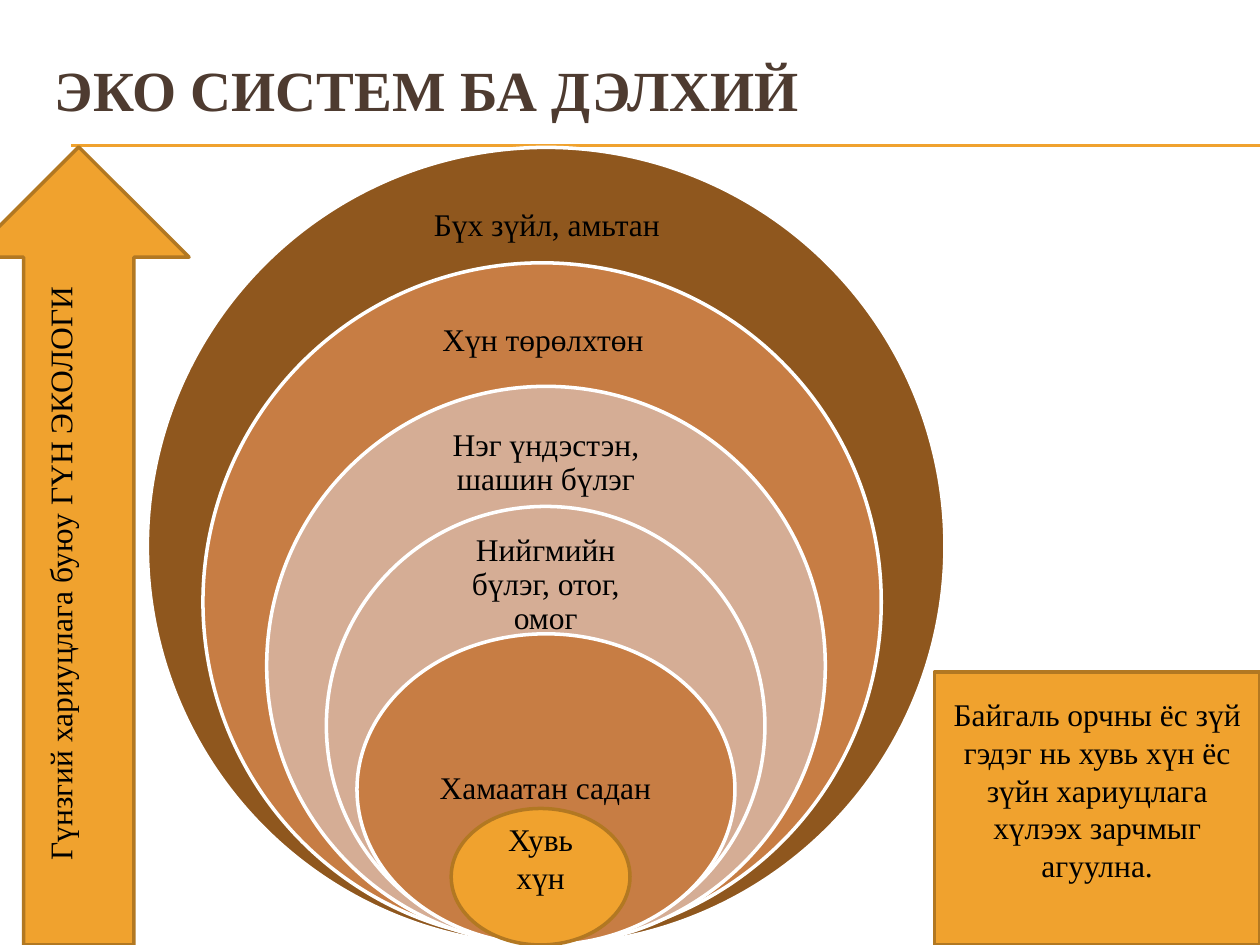
from dataclasses import dataclass

import lxml.etree
import pptx
import pptx.dml.color
import pptx.enum.shapes
import pptx.enum.text
import pptx.oxml.ns
import pptx.util

Pt = pptx.util.Pt
Shape = pptx.enum.shapes.MSO_SHAPE
Anchor = pptx.enum.text.MSO_ANCHOR
Align = pptx.enum.text.PP_ALIGN


@dataclass(frozen=True)
class Theme:
    font: str = "Times New Roman"
    title_size: float = 32.4
    body_size: float = 18
    title: str = "4E3B30"
    text: str = "000000"
    accent: str = "F0A22E"
    accent_edge: str = "B27822"
    ring_edge: str = "FFFFFF"
    brown: str = "8F571E"
    copper: str = "C77D44"
    sand: str = "D5AD95"
    rule_width: float = 0.75
    edge_width: float = 2


@dataclass(frozen=True)
class Box:
    left: float
    top: float
    width: float
    height: float

    def lengths(self) -> tuple:
        return tuple(Pt(v) for v in (self.left, self.top, self.width, self.height))


@dataclass(frozen=True)
class Ring:
    label: str
    fill: str
    outline: Box
    label_box: Box


@dataclass(frozen=True)
class Callout:
    text: str
    kind: int
    box: Box
    insets: dict
    vertical: bool = False


THEME = Theme()

RINGS = [
    Ring("Бүх зүйл, амьтан", THEME.brown,
         Box(84.24, 84.24, 455.76, 455.76), Box(226.8, 106.6, 171.4, 45.4)),
    Ring("Хүн төрөлхтөн", THEME.copper,
         Box(116, 150.2, 387.6, 387.6), Box(226.8, 172.8, 167, 44.6)),
    Ring("Нэг үндэстэн, шашин бүлэг", THEME.sand,
         Box(152.4, 220.8, 319.2, 319.2), Box(229.5, 242.6, 165, 44)),
    Ring("Нийгмийн бүлэг, отог, омог", THEME.sand,
         Box(186.5, 289.4, 250.6, 250.6), Box(244.1, 311.8, 135.4, 45.4)),
    Ring("Хамаатан садан", THEME.copper,
         Box(204, 362.2, 216, 177.8), Box(235.4, 406.8, 152.6, 88.6)),
]

CALLOUTS = [
    Callout("Хувь хүн", Shape.FLOWCHART_CONNECTOR, Box(257.8, 462, 102.2, 78),
            {"margin_bottom": Pt(25.2)}),
    Callout("Гүнзгий хариуцлага буюу ГҮН ЭКОЛОГИ", Shape.UP_ARROW,
            Box(-18, 84, 126, 456), {"margin_right": Pt(25.2)}, vertical=True),
    Callout("Байгаль орчны ёс зүй гэдэг нь хувь хүн ёс зүйн хариуцлага "
            "хүлээх зарчмыг агуулна.", Shape.RECTANGLE,
            Box(534, 384, 186, 156), {"margin_bottom": Pt(25.2)}),
]


def rgb(value: str) -> pptx.dml.color.RGBColor:
    return pptx.dml.color.RGBColor.from_string(value)


def apply(target, formats: dict) -> None:
    for name, value in formats.items():
        setattr(target, name, value)


def write(frame, text: str, frame_formats: dict, paragraph_formats: dict,
          size: float = THEME.body_size, color: str = THEME.text,
          bold: bool = False) -> None:
    frame.text = text
    apply(frame, {"word_wrap": True, "vertical_anchor": Anchor.MIDDLE,
                  "auto_size": pptx.enum.text.MSO_AUTO_SIZE.NONE, **frame_formats})
    paragraph = frame.paragraphs[0]
    apply(paragraph, {"alignment": Align.CENTER, **paragraph_formats})
    font = paragraph.runs[0].font
    apply(font, {"name": THEME.font, "size": Pt(size), "bold": bold})
    font.color.rgb = rgb(color)


def add_filled(shapes, kind: int, box: Box, fill: str, edge: str):
    shape = shapes.add_shape(kind, *box.lengths())
    shape.shadow.inherit = False
    shape.fill.solid()
    shape.fill.fore_color.rgb = rgb(fill)
    shape.line.color.rgb = rgb(edge)
    shape.line.width = Pt(THEME.edge_width)
    return shape


def add_rule(shapes, y: float) -> None:
    rule = shapes.add_connector(pptx.enum.shapes.MSO_CONNECTOR.STRAIGHT,
                                Pt(40.5), Pt(y), Pt(720), Pt(y))
    rule.line.color.rgb = rgb(THEME.accent)
    rule.line.width = Pt(THEME.rule_width)
    lxml.etree.SubElement(rule.element.spPr, pptx.oxml.ns.qn("a:effectLst"))


def add_ring(shapes, ring: Ring) -> None:
    add_filled(shapes, Shape.OVAL, ring.outline, ring.fill, THEME.ring_edge)
    label = shapes.add_textbox(*ring.label_box.lengths())
    sides = ("left", "top", "right", "bottom")
    write(label.text_frame, ring.label,
          {f"margin_{side}": Pt(10) for side in sides},
          {"line_spacing": 0.9, "space_after": Pt(6.3)})


def add_callout(shapes, callout: Callout) -> None:
    shape = add_filled(shapes, callout.kind, callout.box,
                       THEME.accent, THEME.accent_edge)
    write(shape.text_frame, callout.text, callout.insets, {})
    if callout.vertical:
        body = shape.element.txBody.find(pptx.oxml.ns.qn("a:bodyPr"))
        body.set("vert", "vert270")


def main() -> None:
    deck = pptx.Presentation()
    apply(deck, {"slide_width": Pt(720), "slide_height": Pt(540)})
    slide = deck.slides.add_slide(deck.slide_layouts[5])
    shapes = slide.shapes

    heading = shapes.title
    left, top, width, height = Box(24, 36, 684, 66).lengths()
    apply(heading, {"left": left, "top": top, "width": width, "height": height})
    write(heading.text_frame, "ЭКО СИСТЕМ БА ДЭЛХИЙ",
          {"margin_top": Pt(0), "margin_bottom": Pt(36)},
          {"alignment": Align.LEFT},
          THEME.title_size, THEME.title, bold=True)

    for y in (82.8, 83.5):
        add_rule(shapes, y)
    ring_group = shapes.add_group_shape()
    for ring in RINGS:
        add_ring(ring_group.shapes, ring)
    for callout in CALLOUTS:
        add_callout(shapes, callout)

    deck.save("out.pptx")


if __name__ == "__main__":
    main()
